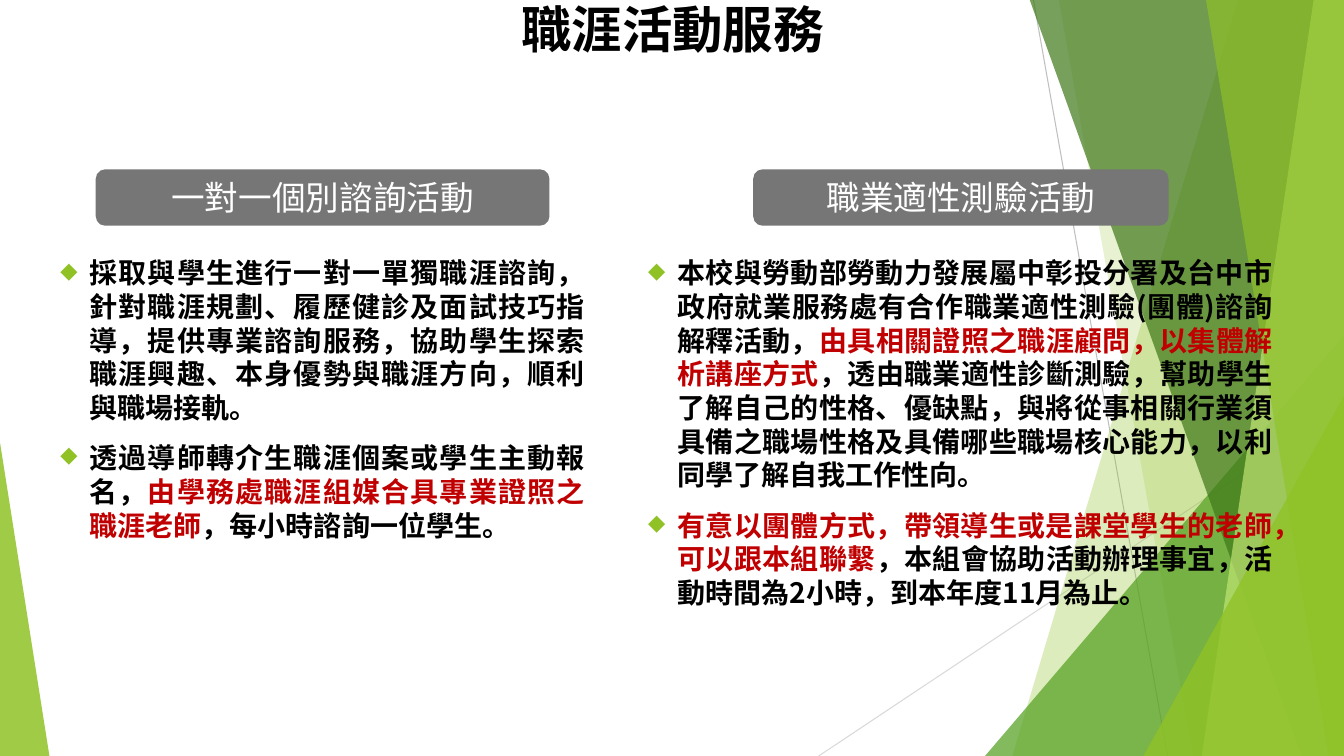
import pptx
import pptx.dml.color
import pptx.enum.shapes
import pptx.enum.text
import pptx.oxml.ns
import pptx.oxml.xmlchemy
import pptx.util

Inches = pptx.util.Inches
Pt = pptx.util.Pt
RGBColor = pptx.dml.color.RGBColor
Shape = pptx.enum.shapes.MSO_SHAPE
Align = pptx.enum.text.PP_ALIGN
Anchor = pptx.enum.text.MSO_ANCHOR
OxmlElement = pptx.oxml.xmlchemy.OxmlElement
qn = pptx.oxml.ns.qn

FONT = "Noto Sans CJK SC"
BLACK = RGBColor(0x00, 0x00, 0x00)
WHITE = RGBColor(0xFF, 0xFF, 0xFF)
RED = RGBColor(0xC0, 0x00, 0x00)
GRAY = RGBColor(0x76, 0x76, 0x76)
LINE_GRAY = RGBColor(0xBF, 0xBF, 0xBF)
LINE_LIGHT = RGBColor(0xD9, 0xD9, 0xD9)
LIME = RGBColor(0x90, 0xC2, 0x26)
GREEN = RGBColor(0x54, 0xA0, 0x21)
DARK_GREEN = RGBColor(0x3F, 0x78, 0x19)
PALE_LIME = RGBColor(0xC0, 0xE4, 0x74)

WIDTH, HEIGHT = 13.33, 7.5

COUNSELING = [
    [("採取與學生進行一對一單獨職涯諮詢，針對職涯規劃、履歷健診及面試技巧指導，提供專業諮詢服務，"
      "協助學生探索職涯興趣、本身優勢與職涯方向，順利與職場接軌。", BLACK)],
    [("透過導師轉介生職涯個案或學生主動報名，", BLACK),
     ("由學務處職涯組媒合具專業證照之職涯老師", RED),
     ("，每小時諮詢一位學生。", BLACK)],
]
APTITUDE_TEST = [
    [("本校與勞動部勞動力發展屬中彰投分署及台中市政府就業服務處有合作職業適性測驗(團體)諮詢解釋活動，", BLACK),
     ("由具相關證照之職涯顧問，以集體解析講座方式", RED),
     ("，透由職業適性診斷測驗，幫助學生了解自己的性格、優缺點，與將從事相關行業須具備之職場性格"
      "及具備哪些職場核心能力，以利同學了解自我工作性向。", BLACK)],
    [("有意以團體方式，帶領導生或是課堂學生的老師，可以跟本組聯繫", RED),
     ("，本組會協助活動辦理事宜，活動時間為2小時，到本年度11月為止。", BLACK)],
]


def paint(shape, color, opacity=100):
    shape.shadow.inherit = False
    shape.fill.solid()
    shape.fill.fore_color.rgb = color
    shape.line.fill.background()
    if opacity < 100:
        color_element = shape._element.spPr.find(qn("a:solidFill"))[0]
        alpha = OxmlElement("a:alpha")
        alpha.set("val", str(opacity * 1000))
        color_element.append(alpha)


def add_line(slide, start, end, color):
    line = slide.shapes.add_connector(
        pptx.enum.shapes.MSO_CONNECTOR.STRAIGHT, *map(Inches, start + end))
    line.line.color.rgb = color
    line.line.width = Pt(0.75)
    line._element.spPr.append(OxmlElement("a:effectLst"))


def add_band(slide, top_left, bottom_left, top_right, color, opacity):
    points = [(top_left, -0.01), (top_right, -0.01),
              (top_right, HEIGHT), (bottom_left, HEIGHT)]
    corners = [(Inches(x), Inches(y)) for x, y in points]
    builder = slide.shapes.build_freeform(*corners[0])
    builder.add_line_segments(corners[1:], close=True)
    paint(builder.convert_to_shape(), color, opacity)


def add_triangle(slide, left, top, width, apex, color, opacity):
    triangle = slide.shapes.add_shape(
        Shape.ISOSCELES_TRIANGLE,
        *map(Inches, (left, top, width, HEIGHT - top)))
    triangle.adjustments[0] = apex
    paint(triangle, color, opacity)


def add_facets(slide, right):
    add_line(slide, (10.25, 0), (11.58, HEIGHT), LINE_GRAY)
    add_line(slide, (right, 4.03), (8.12, HEIGHT), LINE_LIGHT)
    add_band(slide, 12.28, 10.04, right, LIME, 30)
    add_band(slide, 10.5, 11.83, right, LIME, 20)
    add_triangle(slide, 9.77, 3.33, right - 9.77, 1, GREEN, 72)
    add_band(slide, 10.21, 12.91, right, DARK_GREEN, 70)
    add_band(slide, 13.03, 11.92, right, PALE_LIME, 70)
    add_band(slide, 11.96, 13.18, right, LIME, 65)
    add_triangle(slide, 11.34, 3.93, right - 11.34, 1, LIME, 80)
    add_triangle(slide, 0, 4.39, 0.49, 0, LIME, 85)


def add_run(paragraph, text, size, color, bold):
    run = paragraph.add_run()
    run.text = text
    run.font.size = Pt(size)
    run.font.bold = bold
    run.font.name = FONT
    run.font.color.rgb = color
    east_asian = OxmlElement("a:ea")
    east_asian.set("typeface", FONT)
    run._r.get_or_add_rPr().append(east_asian)


def add_bullet(paragraph):
    properties = paragraph._p.get_or_add_pPr()
    properties.set("marL", str(Inches(0.29)))
    properties.set("indent", str(-Inches(0.29)))
    color = OxmlElement("a:buClr")
    rgb = OxmlElement("a:srgbClr")
    rgb.set("val", str(LIME))
    color.append(rgb)
    size = OxmlElement("a:buSzPct")
    size.set("val", "80000")
    symbol = OxmlElement("a:buChar")
    symbol.set("char", "◆")
    for element in (color, size, symbol):
        properties.append(element)


def add_title(slide, left, top, width, height, text):
    box = slide.shapes.add_textbox(*map(Inches, (left, top, width, height)))
    box.text_frame.word_wrap = True
    paragraph = box.text_frame.paragraphs[0]
    paragraph.alignment = Align.CENTER
    paragraph.line_spacing = 0.9
    add_run(paragraph, text, 36, BLACK, True)


def add_heading(slide, left, top, width, height, text):
    heading = slide.shapes.add_shape(
        Shape.ROUNDED_RECTANGLE, *map(Inches, (left, top, width, height)))
    paint(heading, GRAY)
    heading.text_frame.word_wrap = True
    heading.text_frame.vertical_anchor = Anchor.MIDDLE
    paragraph = heading.text_frame.paragraphs[0]
    paragraph.alignment = Align.CENTER
    add_run(paragraph, text, 24, WHITE, False)


def add_body(slide, left, top, width, height, items):
    box = slide.shapes.add_textbox(*map(Inches, (left, top, width, height)))
    frame = box.text_frame
    frame.word_wrap = True
    for index, item in enumerate(items):
        paragraph = frame.add_paragraph() if index else frame.paragraphs[0]
        paragraph.alignment = Align.JUSTIFY
        paragraph.line_spacing = Pt(24)
        paragraph.space_before = Pt(12)
        add_bullet(paragraph)
        for text, color in item:
            add_run(paragraph, text, 20, color, True)


def add_column(slide, left, width, heading_left, heading_width, heading, items):
    add_heading(slide, heading_left, 1.68, heading_width, 0.56, heading)
    add_body(slide, left, 2.49, width, 4.51, items)


def main():
    presentation = pptx.Presentation()
    presentation.slide_width = Inches(WIDTH)
    presentation.slide_height = Inches(HEIGHT)
    slide = presentation.slides.add_slide(presentation.slide_layouts[6])
    add_facets(slide, WIDTH)
    add_title(slide, 0.92, 0, 11.5, 0.91, "職涯活動服務")
    add_column(slide, 0.5, 5.4, 0.95, 4.5, "一對一個別諮詢活動", COUNSELING)
    add_column(slide, 6.33, 6.39, 7.47, 4.12, "職業適性測驗活動", APTITUDE_TEST)
    presentation.save("out.pptx")


if __name__ == "__main__":
    main()
